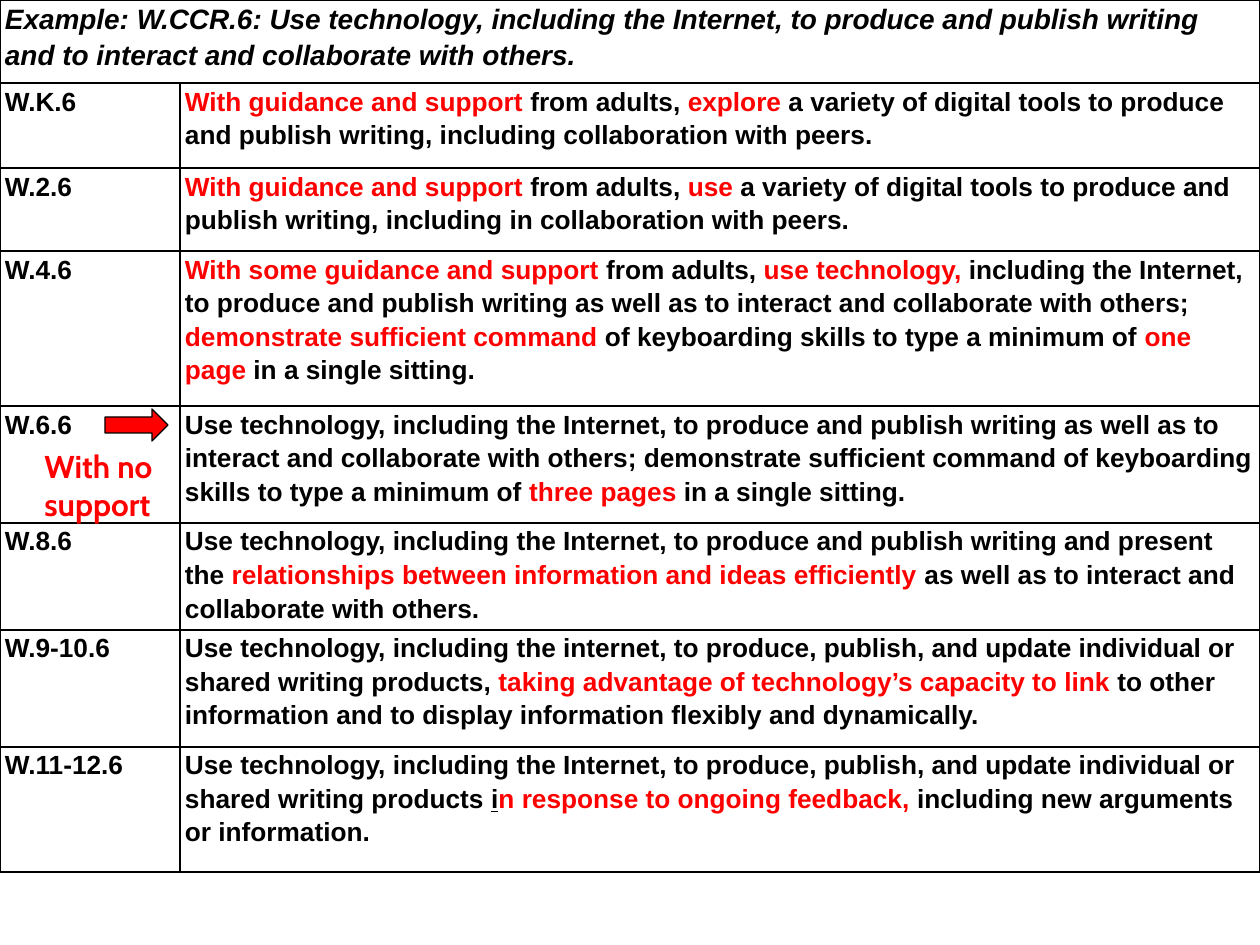
from lxml.etree import SubElement
from pptx import Presentation
from pptx.dml.color import RGBColor
from pptx.enum.shapes import MSO_SHAPE as Shape
from pptx.enum.text import MSO_AUTO_SIZE as AutoSize
from pptx.oxml.ns import qn
from pptx.util import Pt

BLACK = RGBColor(0, 0, 0)
RED = RGBColor(255, 0, 0)
EMU_PER_PX = 914400 / 126

# Content: each standard is a list of (text, format) runs
PLAIN = {}
KEY = {"color": RED}
UNDERLINED = {"underline": True}

HEADING = ("Example: W.CCR.6: Use technology, including the Internet, to produce "
           "and publish writing and to interact and collaborate with others.")
STANDARDS = [
    ("W.K.6", 85, [
        ("With guidance and support ", KEY), ("from adults, ", PLAIN), ("explore ", KEY),
        ("a variety of digital tools to produce and publish writing, "
         "including collaboration with peers.", PLAIN)]),
    ("W.2.6", 83, [
        ("With guidance and support ", KEY), ("from adults, ", PLAIN), ("use ", KEY),
        ("a variety of digital tools to produce and publish writing, "
         "including in collaboration with peers.", PLAIN)]),
    ("W.4.6", 155, [
        ("With some guidance and support ", KEY), ("from adults, ", PLAIN),
        ("use technology, ", KEY),
        ("including the Internet, to produce and publish writing as well as "
         "to interact and collaborate with others; ", PLAIN),
        ("demonstrate sufficient command ", KEY),
        ("of keyboarding skills to type a minimum of ", PLAIN),
        ("one page", KEY), (" in a single sitting.", PLAIN)]),
    ("W.6.6", 117, [
        ("Use technology, including the Internet, to produce and publish writing "
         "as well as to interact and collaborate with others; demonstrate sufficient "
         "command of keyboarding skills to type a minimum of ", PLAIN),
        ("three pages ", KEY), ("in a single sitting.", PLAIN)]),
    ("W.8.6", 107, [
        ("Use technology, including the Internet, to produce and publish writing "
         "and present the ", PLAIN),
        ("relationships between information and ideas efficiently ", KEY),
        ("as well as to interact and collaborate with others.", PLAIN)]),
    ("W.9-10.6", 117, [
        ("Use technology, including the internet, to produce, publish, and update "
         "individual or shared writing products, ", PLAIN),
        ("taking advantage of technology’s capacity to link ", KEY),
        ("to other information and to display information flexibly "
         "and dynamically.", PLAIN)]),
    ("W.11-12.6", 125, [
        ("Use technology, including the Internet, to produce, publish, and update "
         "individual or shared writing products ", PLAIN),
        ("i", UNDERLINED), ("n response to ongoing feedback, ", KEY),
        ("including new arguments or information.", PLAIN)]),
]
HEADING_HEIGHT = 83
COLUMN_WIDTHS = [180, 1080]
CELL_INSET = 5


def px(*lengths):
    return [round(length * EMU_PER_PX) for length in lengths]


def add_run(paragraph, text, size=15, font="Arial", color=BLACK, italic=False, underline=False):
    run = paragraph.add_run()
    run.text = text
    run.font.size = Pt(size)
    run.font.name = font
    run.font.bold = True
    run.font.italic = italic
    run.font.underline = underline
    run.font.color.rgb = color


def style_cell(cell):
    cell.margin_left, cell.margin_right = px(CELL_INSET, CELL_INSET)
    cell.margin_top = cell.margin_bottom = 0
    properties = cell._tc.get_or_add_tcPr()
    for side in ("a:lnL", "a:lnR", "a:lnT", "a:lnB"):
        border = SubElement(properties, qn(side), w=str(Pt(1)))
        fill = SubElement(border, qn("a:solidFill"))
        SubElement(fill, qn("a:srgbClr"), val=str(BLACK))
    cell.fill.background()


def fill_cell(cell, runs):
    paragraph = cell.text_frame.paragraphs[0]
    paragraph.line_spacing = 1.15
    for text, style in runs:
        add_run(paragraph, text, **style)


deck = Presentation()
deck.slide_width, deck.slide_height = px(1260, 945)
slide = deck.slides.add_slide(deck.slide_layouts[6])

# Table of standards
row_heights = [HEADING_HEIGHT] + [height for _, height, _ in STANDARDS]
table = slide.shapes.add_table(len(row_heights), len(COLUMN_WIDTHS),
                               *px(0, 0, sum(COLUMN_WIDTHS), sum(row_heights))).table
table.first_row = table.horz_banding = False
for column, width in zip(table.columns, px(*COLUMN_WIDTHS)):
    column.width = width
for row, height in zip(table.rows, px(*row_heights)):
    row.height = height
for cell in table.iter_cells():
    style_cell(cell)

table.cell(0, 0).merge(table.cell(0, 1))
fill_cell(table.cell(0, 0), [(HEADING, {"size": 16, "italic": True})])
for row, (code, _, standard) in enumerate(STANDARDS, start=1):
    fill_cell(table.cell(row, 0), [(code, PLAIN)])
    fill_cell(table.cell(row, 1), standard)

# Note beside W.6.6
note = slide.shapes.add_textbox(*px(32, 441, 168, 89)).text_frame
note.word_wrap = True
note.auto_size = AutoSize.SHAPE_TO_FIT_TEXT
add_run(note.paragraphs[0], "With no support", size=18, font="Cabin", color=RED)

# Arrow from W.6.6 to its standard
arrow = slide.shapes.add_shape(Shape.RIGHT_ARROW, *px(105, 409, 63, 32))
arrow.shadow.inherit = False
arrow.fill.solid()
arrow.fill.fore_color.rgb = RED
arrow.line.color.rgb = BLACK
arrow.line.width = Pt(0.75)

deck.save("out.pptx")
